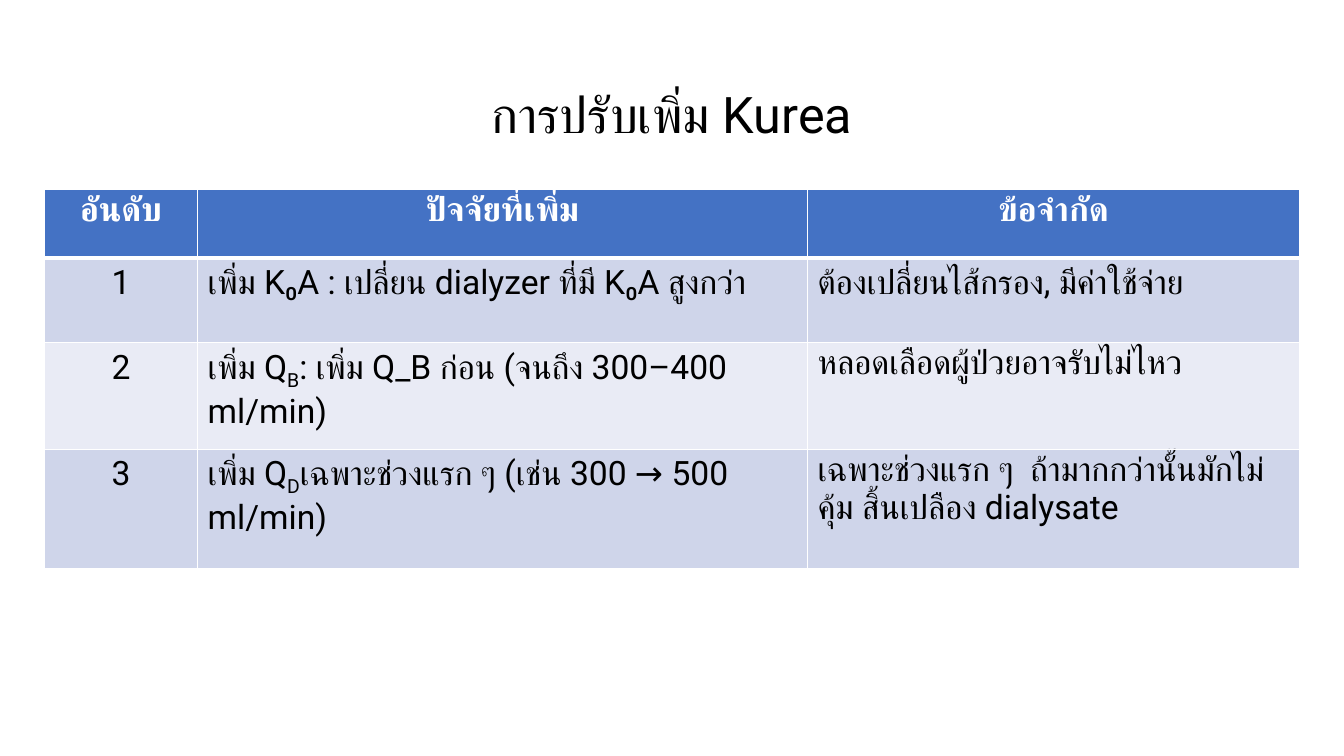
"""Build a slide with a table of ways to raise Kurea and their limits."""
from lxml import etree
from pptx import Presentation
from pptx import util as u
from pptx.dml.color import RGBColor
from pptx.enum import text
from pptx.oxml import ns


def paint(part, color):
    if hasattr(part, "solid"):
        part.solid()
        part = part.fore_color
    else:
        part = part.color
    part.rgb = RGBColor.from_string(color)


def write(para, words, style, color):
    for i, word in enumerate(words):
        run = para.add_run()
        run.text = word
        for key, val in style.items():
            setattr(run.font, key, val)
        paint(run.font, color)
        if i == 1:
            run.font._element.set("baseline", "-25000")


deck = Presentation()
deck.slide_width, deck.slide_height = u.Cm(33.87), u.Cm(19.05)
slide = deck.slides.add_slide(deck.slide_layouts[5])

title = slide.shapes.title
box = {"left": 0, "top": 1.2, "width": 33.87, "height": 2.36}
for key, val in box.items():
    setattr(title, key, u.Cm(val))
frame = title.text_frame
frame.vertical_anchor = text.MSO_ANCHOR.TOP
para = frame.paragraphs[0]
para.alignment = text.PP_ALIGN.CENTER
para.line_spacing = 1.5
write(para, ["การปรับเพิ่ม Kurea"], {"name": "Roboto", "size": u.Pt(36)}, "000000")

rows = [
    [["อันดับ"], ["ปัจจัยที่เพิ่ม"], ["ข้อจำกัด"]],
    [["1"], ["เพิ่ม K₀A : เปลี่ยน dialyzer ที่มี K₀A สูงกว่า"],
     ["ต้องเปลี่ยนไส้กรอง, มีค่าใช้จ่าย"]],
    [["2"], ["เพิ่ม Q", "B", ": เพิ่ม Q_B ก่อน (จนถึง 300–400 ml/min)"],
     ["หลอดเลือดผู้ป่วยอาจรับไม่ไหว"]],
    [["3"], ["เพิ่ม Q", "D", "เฉพาะช่วงแรก ๆ (เช่น 300 → 500 ml/min)"],
     ["เฉพาะช่วงแรก ๆ  ถ้ามากกว่านั้นมักไม่คุ้ม สิ้นเปลือง dialysate"]],
]
wide = [3.86, 15.37, 12.4]
high = [1.73, 2.13, 2.68, 3.01]
fills = ["4472C4", "CFD5EA", "E9EBF5", "CFD5EA"]
edges = {"a:lnL": 1, "a:lnR": 1, "a:lnT": 1, "a:lnB": 3}

grid = slide.shapes.add_table(4, 3, u.Cm(1.12), u.Cm(4.78),
                              u.Cm(sum(wide)), u.Cm(sum(high))).table
for col, size in zip(grid.columns, wide):
    col.width = u.Cm(size)
for r, row in enumerate(rows):
    grid.rows[r].height = u.Cm(high[r])
    head = r == 0
    style = {"name": "Roboto", "size": u.Pt(24), "bold": head}
    for c, words in enumerate(row):
        cell = grid.cell(r, c)
        paint(cell.fill, fills[r])
        para = cell.text_frame.paragraphs[0]
        if head or c == 0:
            para.alignment = text.PP_ALIGN.CENTER
        write(para, words, style, "FFFFFF" if head else "000000")
        if head:
            props = cell._tc.get_or_add_tcPr()
            for i, (tag, size) in enumerate(edges.items()):
                line = etree.Element(ns.qn(tag), w=str(u.Pt(size)))
                fill = etree.SubElement(line, ns.qn("a:solidFill"))
                etree.SubElement(fill, ns.qn("a:srgbClr"), val="FFFFFF")
                props.insert(i, line)

deck.save("out.pptx")
